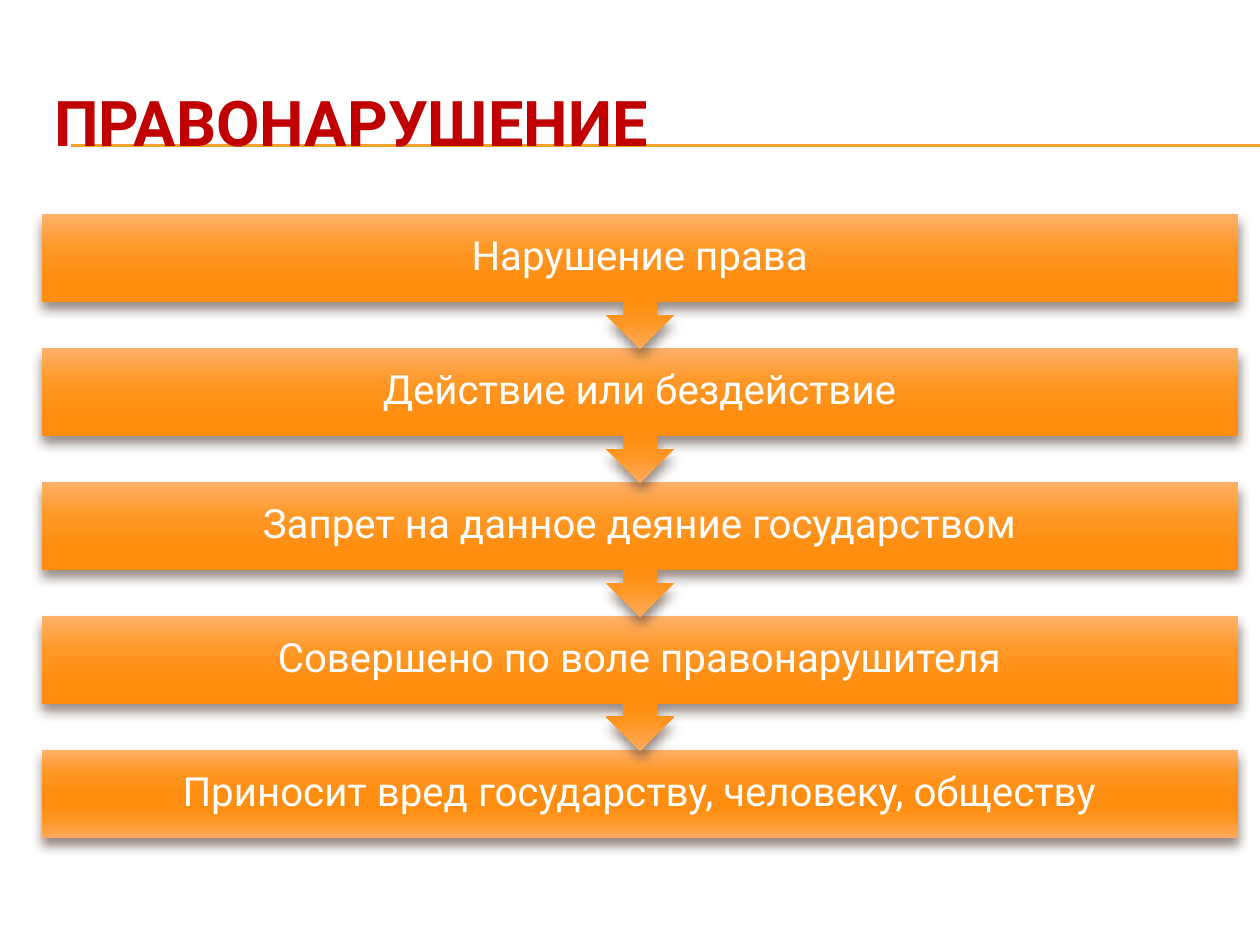
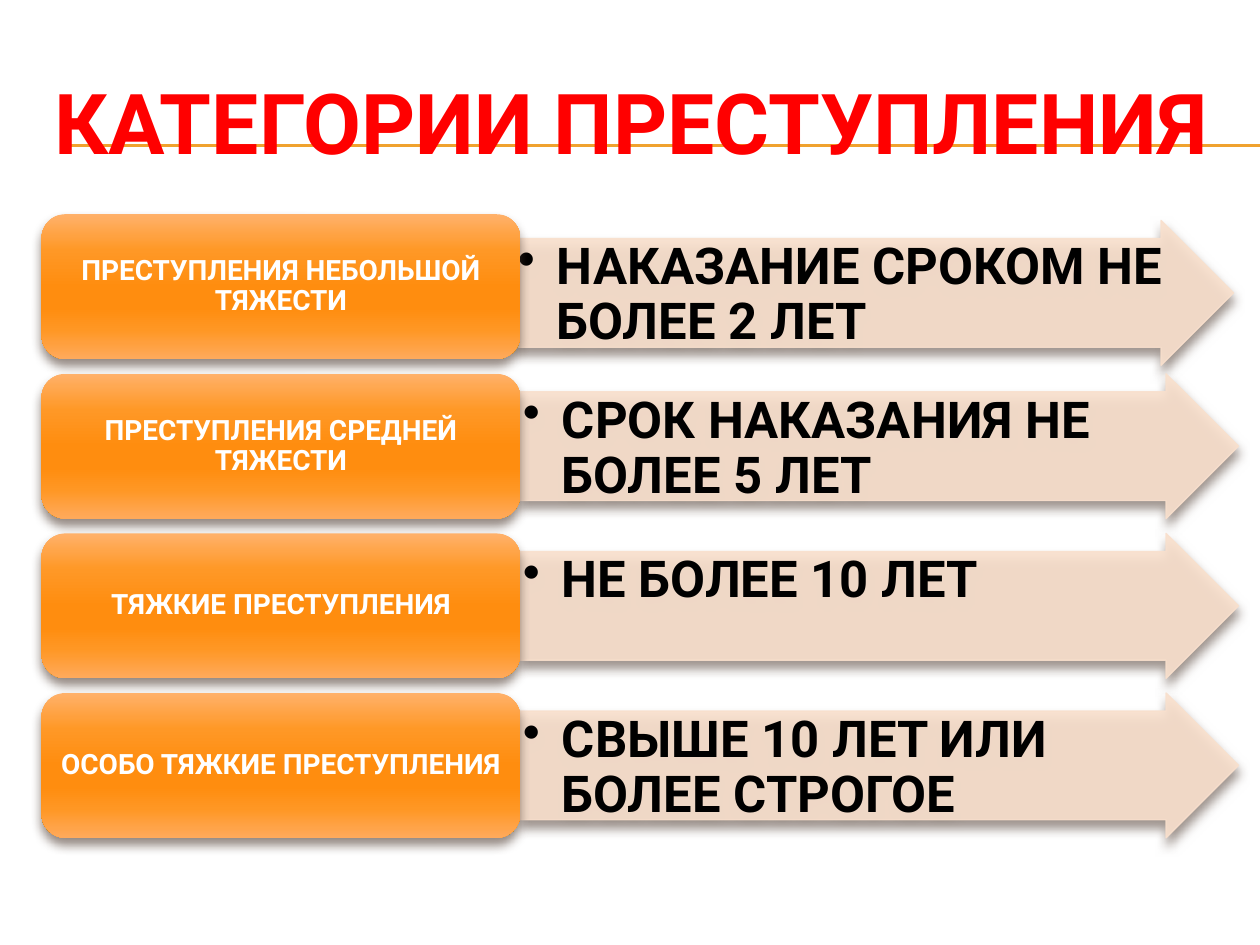
from lxml.etree import SubElement
from pptx import Presentation
from pptx.dml.color import RGBColor
from pptx.enum.shapes import MSO_CONNECTOR, MSO_SHAPE
from pptx.enum.text import MSO_ANCHOR, MSO_AUTO_SIZE, PP_ALIGN
from pptx.oxml import parse_xml
from pptx.oxml.ns import nsdecls, qn
from pptx.util import Inches, Pt

# Shared look
FONT = "Roboto"
WHITE, BLACK = "FFFFFF", "000000"
RULE, PALE, SHADOW = "F0A22E", "F9E0CD", "4E3B30"
ORANGE = [(0, "FFB16A"), (25, "FF9826"), (50, "FF8D0F"),
          (65, "FF8D0F"), (80, "FF9724"), (100, "FFAA5C")]

# Shared grid, in inches
LEFT, TOP, WIDTH, HEIGHT = 0.33, 1.7, 9.5, 4.95


def rgb(code):
    return RGBColor.from_string(code)


def add_block(slide, kind, box, text, size, color, bold, margins, gradient):
    """Shadowed shape with one paragraph: orange gradient or pale tint."""
    block = slide.shapes.add_shape(kind, *map(Inches, box))
    properties = block._element.spPr
    if gradient:
        block.line.fill.background()
        stops = "".join(f'<a:gs pos="{pos * 1000}"><a:srgbClr val="{code}"/></a:gs>'
                        for pos, code in ORANGE)
        properties.insert(2, parse_xml(
            f'<a:gradFill {nsdecls("a")} rotWithShape="1"><a:gsLst>{stops}</a:gsLst>'
            '<a:lin ang="5400000" scaled="0"/></a:gradFill>'))
    else:
        block.fill.solid()
        block.fill.fore_color.rgb = rgb(PALE)
        block.line.color.rgb = rgb(PALE)
        block.line.width = Pt(0.79)
        for tint in properties.iter(qn("a:srgbClr")):
            SubElement(tint, qn("a:alpha"), val="90000")
    properties.append(parse_xml(
        f'<a:effectLst {nsdecls("a")}><a:outerShdw blurRad="{Pt(6)}" dist="{Pt(4)}" '
        f'dir="5400000" rotWithShape="0"><a:srgbClr val="{SHADOW}">'
        '<a:alpha val="60000"/></a:srgbClr></a:outerShdw></a:effectLst>'))

    frame = block.text_frame
    frame.word_wrap = True
    frame.vertical_anchor = MSO_ANCHOR.MIDDLE
    frame.margin_left = frame.margin_right = Inches(margins[0])
    frame.margin_top = frame.margin_bottom = Inches(margins[1])
    paragraph = frame.paragraphs[0]
    paragraph.text = text
    paragraph.alignment = PP_ALIGN.CENTER
    paragraph.line_spacing = 0.9
    paragraph.font.name = FONT
    paragraph.font.size = Pt(size)
    paragraph.font.bold = bold
    paragraph.font.color.rgb = rgb(color)
    return block


deck = Presentation()
deck.slide_width, deck.slide_height = Inches(10), Inches(7.5)

# Titles over the double rule
slides = []
for heading, size, color in [("ПРАВОНАРУШЕНИЕ", 36, "C00000"),
                             ("КАТЕГОРИИ ПРЕСТУПЛЕНИЯ", 48, "FF0000")]:
    slide = deck.slides.add_slide(deck.slide_layouts[5])
    slides.append(slide)
    title = slide.shapes.title
    title.left, title.top = Inches(LEFT), Inches(0.5)
    title.width, title.height = Inches(WIDTH), Inches(0.92)
    title.text_frame.text = heading
    title.text_frame.auto_size = MSO_AUTO_SIZE.NONE
    title.text_frame.vertical_anchor = MSO_ANCHOR.MIDDLE
    paragraph = title.text_frame.paragraphs[0]
    paragraph.alignment = PP_ALIGN.LEFT
    paragraph.font.name = FONT
    paragraph.font.size = Pt(size)
    paragraph.font.bold = True
    paragraph.font.color.rgb = rgb(color)

    for y in (1.15, 1.16):
        rule = slide.shapes.add_connector(MSO_CONNECTOR.STRAIGHT, Inches(0.56), Inches(y),
                                          deck.slide_width, Inches(y))
        rule.line.color.rgb = rgb(RULE)
        rule.line.width = Pt(0.75)
        SubElement(rule._element.spPr, qn("a:effectLst"))
        title._element.addprevious(rule._element)

offence_slide, category_slide = slides

# Signs of an offence: stacked from the bottom so each arrow tip lies over the next bar
signs = ["Нарушение права", "Действие или бездействие",
         "Запрет на данное деяние государством",
         "Совершено по воле правонарушителя",
         "Приносит вред государству, человеку, обществу"]
BAR, CALLOUT = 0.7, 1.07
last = len(signs) - 1
pitch = (HEIGHT - BAR) / last
for row in range(last, -1, -1):
    kind, height = ((MSO_SHAPE.RECTANGLE, BAR) if row == last
                    else (MSO_SHAPE.DOWN_ARROW_CALLOUT, CALLOUT))
    add_block(offence_slide, kind, (LEFT, TOP + row * pitch, WIDTH, height),
              signs[row], 23, WHITE, False, (0.18, 0.18), gradient=True)

# Categories of crime: label on the left, punishment in the arrow
categories = [
    ("ПРЕСТУПЛЕНИЯ НЕБОЛЬШОЙ ТЯЖЕСТИ", "НАКАЗАНИЕ СРОКОМ НЕ БОЛЕЕ 2 ЛЕТ", (-0.04, 0.05)),
    ("ПРЕСТУПЛЕНИЯ СРЕДНЕЙ ТЯЖЕСТИ", "СРОК НАКАЗАНИЯ НЕ БОЛЕЕ 5 ЛЕТ", (0, 0)),
    ("ТЯЖКИЕ ПРЕСТУПЛЕНИЯ", "НЕ БОЛЕЕ 10 ЛЕТ", (0, 0)),
    ("ОСОБО ТЯЖКИЕ ПРЕСТУПЛЕНИЯ", "СВЫШЕ 10 ЛЕТ ИЛИ БОЛЕЕ СТРОГОЕ", (0, 0)),
]
ROW = 1.15
label_width = 0.4 * WIDTH
pitch = (HEIGHT - ROW) / (len(categories) - 1)
for row, (category, punishment, (shift_x, shift_y)) in enumerate(categories):
    y = TOP + row * pitch
    arrow = add_block(category_slide, MSO_SHAPE.RIGHT_ARROW,
                      (LEFT + label_width + shift_x, y + shift_y, WIDTH - label_width, ROW),
                      punishment, 29, BLACK, True, (0.02, 0.02), gradient=False)
    arrow.adjustments[0], arrow.adjustments[1] = 0.75, 0.5
    arrow.text_frame.vertical_anchor = MSO_ANCHOR.TOP
    paragraph = arrow.text_frame.paragraphs[0]
    paragraph.alignment = PP_ALIGN.LEFT
    bullet = paragraph._p.get_or_add_pPr()
    bullet.set("marL", str(Inches(0.31)))
    bullet.set("indent", str(-Inches(0.31)))
    bullet.find(qn("a:lnSpc")).addnext(parse_xml(f'<a:buChar {nsdecls("a")} char="•"/>'))

    add_block(category_slide, MSO_SHAPE.ROUNDED_RECTANGLE, (LEFT, y, label_width, ROW),
              category, 16, WHITE, True, (0.07, 0.03), gradient=True)

deck.save("out.pptx")
